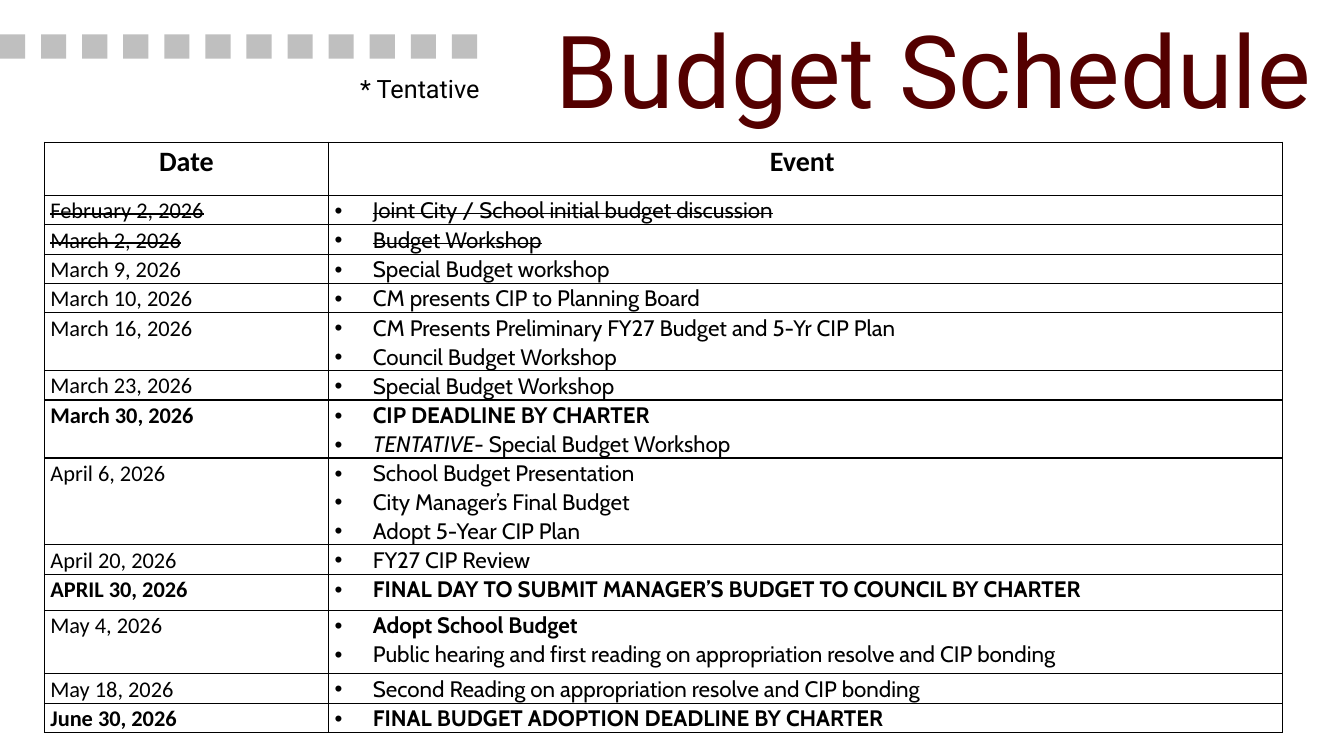
from dataclasses import dataclass

from lxml.etree import SubElement as Sub
from pptx import Presentation
from pptx.dml.color import RGBColor
from pptx.enum.shapes import MSO_SHAPE as Kind
from pptx.enum.text import MSO_ANCHOR as Anchor, MSO_AUTO_SIZE as Fit, PP_ALIGN as Align
from pptx.oxml.ns import qn
from pptx.util import Emu, Inches, Pt

# The slide is a grid of 160 columns by 90 rows, twelve to the inch
COLS, ROWS = 160, 90
BLACK, GREY, MAROON = "000000", "BFBFBF", "540000"


@dataclass
class Box:
    left: float
    top: float
    width: float
    height: float


@dataclass
class Line:
    text: str
    bold: bool = False
    struck: bool = False
    lead: str = ""  # italic words before the text


@dataclass
class Entry:
    date: Line
    events: list[Line]
    height: float = 3.36


ENTRIES = [
    Entry(Line("February 2, 2026", struck=True),
          [Line("Joint City / School initial budget discussion", struck=True)]),
    Entry(Line("March 2, 2026", struck=True), [Line("Budget Workshop", struck=True)]),
    Entry(Line("March 9, 2026"), [Line("Special Budget workshop")]),
    Entry(Line("March 10, 2026"), [Line("CM presents CIP to Planning Board")]),
    Entry(Line("March 16, 2026"),
          [Line("CM Presents Preliminary FY27 Budget and 5-Yr CIP Plan"),
           Line("Council Budget Workshop")], 6.24),
    Entry(Line("March 23, 2026"), [Line("Special Budget Workshop")]),
    Entry(Line("March 30, 2026", bold=True),
          [Line("CIP DEADLINE BY CHARTER", bold=True),
           Line("- Special Budget Workshop", lead="TENTATIVE")], 6.24),
    Entry(Line("April 6, 2026"),
          [Line("School Budget Presentation"), Line("City Manager’s Final Budget"),
           Line("Adopt 5-Year CIP Plan")], 9.36),
    Entry(Line("April 20, 2026"), [Line("FY27 CIP Review")]),
    Entry(Line("APRIL 30, 2026", bold=True),
          [Line("FINAL DAY TO SUBMIT MANAGER’S BUDGET TO COUNCIL BY CHARTER", bold=True)],
          4.32),
    Entry(Line("May 4, 2026"),
          [Line("Adopt School Budget", bold=True),
           Line("Public hearing and first reading on appropriation resolve and CIP bonding")],
          7.56),
    Entry(Line("May 18, 2026"),
          [Line("Second Reading on appropriation resolve and CIP bonding")]),
    Entry(Line("June 30, 2026", bold=True),
          [Line("FINAL BUDGET ADOPTION DEADLINE BY CHARTER", bold=True)]),
]


def unit(count: float) -> Emu:
    return Inches(count / 12)


def color(code: str) -> RGBColor:
    return RGBColor.from_string(code)


def place(shape, box: Box) -> None:
    shape.left, shape.top = unit(box.left), unit(box.top)
    shape.width, shape.height = unit(box.width), unit(box.height)


def style(para, face: str, size: float, code: str, bold: bool = False) -> None:
    font = para.font
    font.name, font.size, font.bold = face, Pt(size), bold
    font.color.rgb = color(code)


def head(shape, box: Box, text: str, size: float, code: str, anchor: Anchor) -> None:
    place(shape, box)
    frame = shape.text_frame
    frame.text, frame.word_wrap = text, True
    frame.auto_size, frame.vertical_anchor = Fit.NONE, anchor
    para = frame.paragraphs[0]
    para.alignment, para.line_spacing, para.space_before = Align.CENTER, 0.9, Pt(0)
    style(para, "Roboto", size, code)


def frame_cell(cell) -> None:
    """Set the insets, the four borders and an empty fill."""
    cell.margin_left = cell.margin_right = Inches(0.06)
    cell.margin_top = cell.margin_bottom = 0
    props = cell._tc.get_or_add_tcPr()
    for side in ("lnL", "lnR", "lnT", "lnB"):
        edge = Sub(props, qn(f"a:{side}"), w=str(Pt(1)))
        Sub(Sub(edge, qn("a:solidFill")), qn("a:srgbClr"), val=BLACK)
    cell.fill.background()


def write(cell, lines: list[Line], face: str, size: float = 16,
          bullet: bool = False, align: Align = Align.LEFT) -> None:
    frame_cell(cell)
    frame = cell.text_frame
    for spot, line in enumerate(lines):
        para = frame.add_paragraph() if spot else frame.paragraphs[0]
        props = para._p.get_or_add_pPr()
        if bullet:
            indent = Inches(0.38)
            props.set("marL", str(indent))
            props.set("indent", str(-indent))
            Sub(props, qn("a:buFont"), typeface="Arial")
            Sub(props, qn("a:buChar"), char="•")
        para.alignment, para.line_spacing = align, 1.07
        para.space_after = Pt(8 if line is lines[-1] else 0)
        style(para, face, size, BLACK, line.bold)
        if line.struck:
            props.find(qn("a:defRPr")).set("strike", "sngStrike")
        if line.lead:
            run = para.add_run()
            run.text, run.font.italic = line.lead, True
        para.add_run().text = line.text


def add_squares(slide) -> None:
    for spot in range(12):
        square = slide.shapes.add_shape(Kind.RECTANGLE, 0, 0, 0, 0)
        place(square, Box(spot * 4.89, 4.1, 3, 2.9))
        square.shadow.inherit = False
        square.fill.solid()
        square.fill.fore_color.rgb = color(GREY)
        square.line.fill.background()


def add_dates(slide) -> None:
    widths = (33.84, 113.52)
    heights = [6.36] + [entry.height for entry in ENTRIES]
    table = slide.shapes.add_table(
        len(heights), len(widths), unit(5.28), unit(16.92),
        unit(sum(widths)), unit(sum(heights))).table
    table.first_row = table.horz_banding = False
    for col, width in zip(table.columns, widths):
        col.width = unit(width)
    for row, height in zip(table.rows, heights):
        row.height = unit(height)
    for spot, label in enumerate(("Date", "Event ")):
        write(table.cell(0, spot), [Line(label, bold=True)], "Calibri", 20,
              align=Align.CENTER)
    for spot, entry in enumerate(ENTRIES, 1):
        write(table.cell(spot, 0), [entry.date], "Calibri")
        write(table.cell(spot, 1), entry.events, "Cabin", bullet=True)


def main() -> None:
    deck = Presentation()
    deck.slide_width, deck.slide_height = unit(COLS), unit(ROWS)
    slide = deck.slides.add_slide(deck.slide_layouts[0])
    # Row of squares, top left
    add_squares(slide)
    # Title and note
    title, note = slide.placeholders
    head(title, Box(62.28, 2.4, 97.72, 13.68), "Budget Schedule", 72, MAROON, Anchor.BOTTOM)
    head(note, Box(30.84, 8.52, 38.28, 7.44), "* Tentative", 18, BLACK, Anchor.TOP)
    # Schedule
    add_dates(slide)
    deck.save("out.pptx")


if __name__ == "__main__":
    main()
